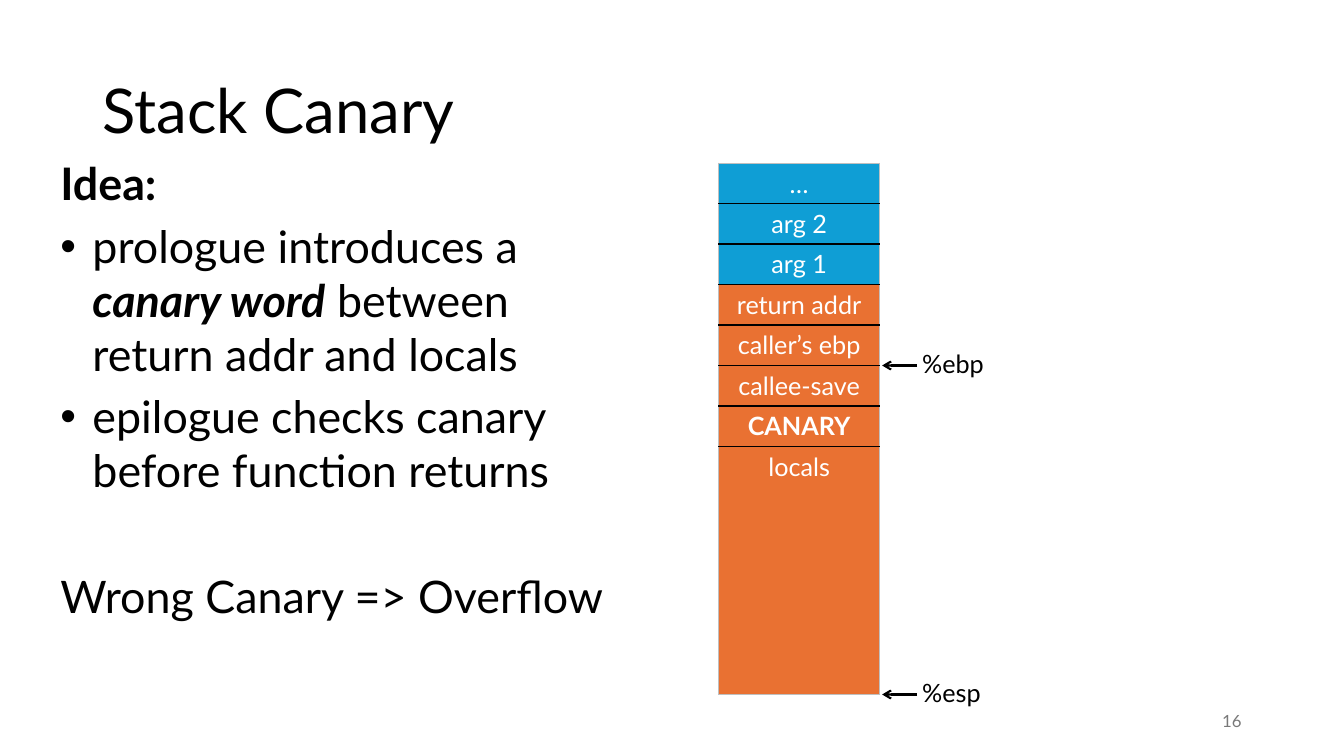
from lxml.etree import SubElement
from pptx import Presentation
from pptx.dml.color import RGBColor
from pptx.enum.shapes import MSO_CONNECTOR as Connector
from pptx.enum.text import MSO_ANCHOR as Anchor, MSO_AUTO_SIZE as AutoSize, PP_ALIGN as Align
from pptx.oxml import parse_xml
from pptx.oxml.ns import nsdecls, qn
from pptx.util import Cm, Pt

COLORS = {"text": "000000", "number": "797979", "light": "FFFFFF",
          "caller": "0F9ED5", "frame": "E97132", "edge": "BFBFBF"}
FONT = "Lato"

TITLE = "Stack Canary"
SLIDE_NUMBER = "16"
BODY = [
    {"runs": [("Idea:", {"bold": True})], "before": 0},
    {"runs": [("prologue introduces a ", {}),
              ("canary word", {"bold": True, "italic": True}),
              (" between return addr and locals", {})], "before": 6.4, "bullet": True},
    {"runs": [("epilogue checks canary before function returns", {})], "before": 6.4, "bullet": True},
    {"runs": [("Wrong Canary => Overflow", {})], "before": 51.2},
]
STACK = [("…", "caller"), ("arg 2", "caller"), ("arg 1", "caller"),
         ("return addr", "frame"), ("caller’s ebp", "frame"), ("callee-save", "frame"),
         ("CANARY", "frame"), ("locals", "frame")]
BOLD_SLOT = "CANARY"
POINTERS = [("%ebp", 5), ("%esp", 8)]

STACK_LEFT, STACK_TOP, STACK_WIDTH = 18.11, 4.11, 4.06
ROW_HEIGHTS = [1.02] * 7 + [6.25]
ARROW_HEAD, ARROW_TAIL = 22.23, 23.11
LABEL_LEFT, LABEL_RISE = 22.99, 0.55


def add_run(paragraph, text, size, color="text", **style):
    run = paragraph.add_run()
    run.text = text
    values = {"name": FONT, "size": Pt(size), "bold": False, **style}
    for name, value in values.items():
        setattr(run.font, name, value)
    run.font.color.rgb = RGBColor.from_string(COLORS[color])


def add_text_box(slide, left, top, width, height, **frame_format):
    frame = slide.shapes.add_textbox(Cm(left), Cm(top), Cm(width), Cm(height)).text_frame
    for name, value in {"word_wrap": True, **frame_format}.items():
        setattr(frame, name, value)
    return frame


def add_bullet(paragraph):
    properties = paragraph._p.get_or_add_pPr()
    properties.set("marL", str(Cm(0.81)))
    properties.set("indent", str(Cm(-0.81)))
    SubElement(properties, qn("a:buFont"), typeface="Arial")
    SubElement(properties, qn("a:buChar"), char="•")


def add_borders(cell, sides):
    properties = cell._tc.get_or_add_tcPr()
    for position, (side, color) in enumerate(sides.items()):
        properties.insert(position, parse_xml(
            f'<a:ln{side} {nsdecls("a")} w="{Pt(1)}"><a:solidFill>'
            f'<a:srgbClr val="{COLORS[color]}"/></a:solidFill></a:ln{side}>'))


def add_body(slide):
    frame = add_text_box(slide, 1.27, 3.81, 14.78, 13.21)
    for index, item in enumerate(BODY):
        paragraph = frame.add_paragraph() if index else frame.paragraphs[0]
        paragraph.space_before = Pt(item["before"])
        if item.get("bullet"):
            add_bullet(paragraph)
        for text, style in item["runs"]:
            add_run(paragraph, text, 32, **style)


def add_stack(slide):
    table = slide.shapes.add_table(len(STACK), 1, Cm(STACK_LEFT), Cm(STACK_TOP),
                                   Cm(STACK_WIDTH), Cm(sum(ROW_HEIGHTS))).table
    table.first_row = table.horz_banding = False
    last = len(STACK) - 1
    for index, (label, color) in enumerate(STACK):
        table.rows[index].height = Cm(ROW_HEIGHTS[index])
        cell = table.cell(index, 0)
        cell.fill.solid()
        cell.fill.fore_color.rgb = RGBColor.from_string(COLORS[color])
        add_borders(cell, {"L": "edge", "R": "edge",
                           "T": "text" if index else "edge",
                           "B": "text" if index < last else "edge"})
        paragraph = cell.text_frame.paragraphs[0]
        paragraph.alignment = Align.CENTER
        add_run(paragraph, label, 18, "light", bold=label == BOLD_SLOT)


def add_pointer(slide, label, rows_above):
    y = STACK_TOP + sum(ROW_HEIGHTS[:rows_above])
    frame = add_text_box(slide, LABEL_LEFT, y - LABEL_RISE, 2.1, 1.02,
                         word_wrap=False, auto_size=AutoSize.SHAPE_TO_FIT_TEXT)
    add_run(frame.paragraphs[0], label, 18)
    arrow = slide.shapes.add_connector(Connector.STRAIGHT, Cm(ARROW_TAIL), Cm(y), Cm(ARROW_HEAD), Cm(y))
    arrow.line.color.rgb = RGBColor.from_string(COLORS["text"])
    arrow.line.width = Pt(1.5)
    SubElement(arrow.line._get_or_add_ln(), qn("a:tailEnd"), type="arrow")
    SubElement(arrow._element.spPr, qn("a:effectLst"))


def main():
    """Build the stack canary slide."""
    presentation = Presentation()
    presentation.slide_width, presentation.slide_height = Cm(33.87), Cm(19.05)
    slide = presentation.slides.add_slide(presentation.slide_layouts[6])

    title = add_text_box(slide, 2.33, 1.01, 29.21, 3.68, vertical_anchor=Anchor.MIDDLE).paragraphs[0]
    title.line_spacing = 0.9
    add_run(title, TITLE, 44)

    number = add_text_box(slide, 23.92, 17.66, 7.62, 1.01, vertical_anchor=Anchor.MIDDLE).paragraphs[0]
    number.alignment = Align.RIGHT
    add_run(number, SLIDE_NUMBER, 12, "number")

    add_body(slide)
    add_stack(slide)
    for label, rows_above in POINTERS:
        add_pointer(slide, label, rows_above)
    presentation.save("out.pptx")


if __name__ == "__main__":
    main()
